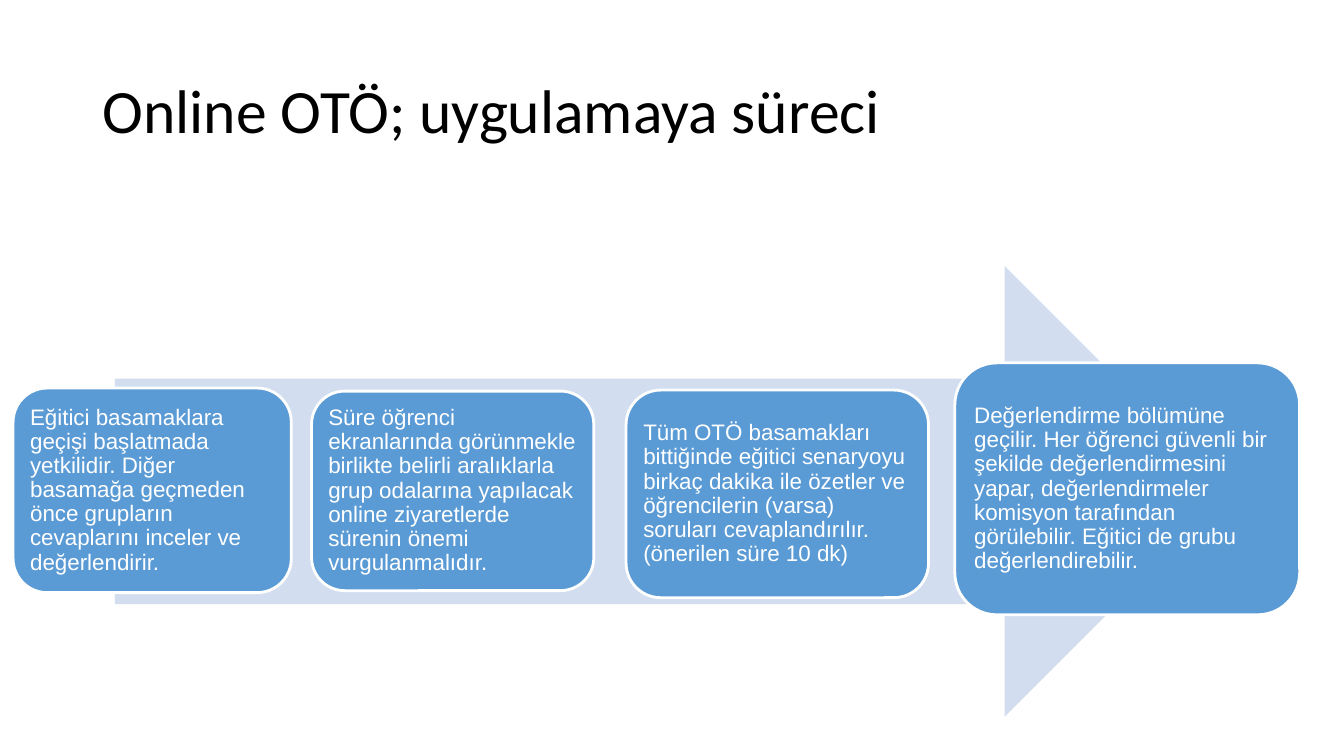
from typing import NamedTuple

from pptx import Presentation
from pptx.dml import color
from pptx.enum import shapes, text
from pptx.util import Inches, Pt

HUES = {"ink": "000000", "white": "FFFFFF", "arrow": "D2DEEF", "step": "5B9BD5"}


class Box(NamedTuple):
    left: float
    top: float
    width: float
    height: float


class Step(NamedTuple):
    box: Box
    words: str


STEPS = [
    Step(Box(0.13, 3.85, 2.76, 2.03),
         "Eğitici basamaklara geçişi başlatmada yetkilidir. Diğer basamağa "
         "geçmeden önce grupların cevaplarını inceler ve değerlendirir."),
    Step(Box(3.09, 3.88, 2.8, 1.98),
         "Süre öğrenci ekranlarında görünmekle birlikte belirli aralıklarla grup "
         "odalarına yapılacak online ziyaretlerde sürenin önemi vurgulanmalıdır."),
    Step(Box(6.21, 3.87, 3, 2.06),
         "Tüm OTÖ basamakları bittiğinde eğitici senaryoyu birkaç dakika ile özetler "
         "ve öğrencilerin (varsa) soruları cevaplandırılır. (önerilen süre 10 dk)"),
    Step(Box(9.47, 3.6, 3.42, 2.5),
         "Değerlendirme bölümüne geçilir. Her öğrenci güvenli bir şekilde "
         "değerlendirmesini yapar, değerlendirmeler komisyon tarafından görülebilir. "
         "Eğitici de grubu değerlendirebilir."),
]


def tint(name: str) -> color.RGBColor:
    return color.RGBColor.from_string(HUES[name])


def write(shape, words: str, font: str, size: int, hue: str,
          side: float, edge: float) -> None:
    frame = shape.text_frame
    frame.word_wrap = True
    frame.vertical_anchor = text.MSO_ANCHOR.MIDDLE
    frame.margin_left = frame.margin_right = Inches(side)
    frame.margin_top = frame.margin_bottom = Inches(edge)
    para = frame.paragraphs[0]
    para.text = words
    para.alignment = text.PP_ALIGN.LEFT
    para.line_spacing = 0.9
    para.font.name = font
    para.font.size = Pt(size)
    para.font.color.rgb = tint(hue)


def block(slide, kind: shapes.MSO_SHAPE, box: Box, hue: str):
    shape = slide.shapes.add_shape(kind, *map(Inches, box))
    shape.shadow.inherit = False
    shape.fill.solid()
    shape.fill.fore_color.rgb = tint(hue)
    shape.line.fill.background()
    return shape


def card(slide, step: Step) -> None:
    shape = block(slide, shapes.MSO_SHAPE.ROUNDED_RECTANGLE, step.box, "step")
    shape.line.color.rgb = tint("white")
    shape.line.width = Pt(2)
    write(shape, step.words, "Arial", 16, "white", 0.07, 0.07)


def main() -> None:
    deck = Presentation()
    deck.slide_width, deck.slide_height = Inches(13.33), Inches(7.5)
    slide = deck.slides.add_slide(deck.slide_layouts[6])

    # Title
    title = slide.shapes.add_textbox(*map(Inches, Box(0.92, 0.4, 11.5, 1.45)))
    write(title, "Online OTÖ; uygulamaya süreci", "Calibri", 44, "ink", 0.1, 0.05)

    # Arrow behind the steps
    block(slide, shapes.MSO_SHAPE.RIGHT_ARROW, Box(1.14, 2.64, 11.06, 4.47), "arrow")

    # Steps
    for step in STEPS:
        card(slide, step)

    deck.save("out.pptx")


if __name__ == "__main__":
    main()
